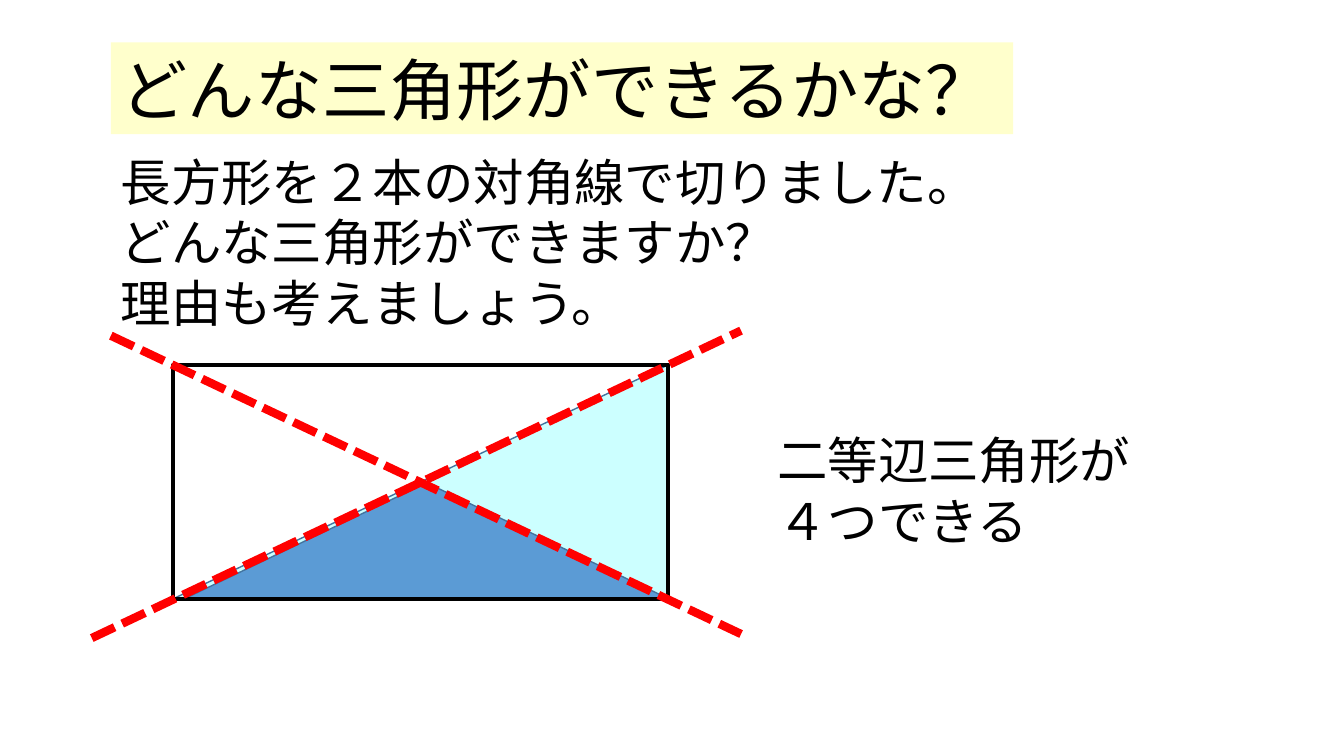
from dataclasses import dataclass

from lxml.etree import SubElement
from pptx import Presentation
from pptx.dml.color import RGBColor
from pptx.enum.dml import MSO_LINE_DASH_STYLE as Dash
from pptx.enum.shapes import MSO_CONNECTOR as Link, MSO_SHAPE as Form
from pptx.enum.text import MSO_ANCHOR as Anchor
from pptx.oxml.ns import qn
from pptx.util import Inches, Pt

FONT = "Noto Sans CJK JP"
BLACK = RGBColor(0x00, 0x00, 0x00)
RED = RGBColor(0xFF, 0x00, 0x00)
BLUE = RGBColor(0x5B, 0x9B, 0xD5)
NAVY = RGBColor(0x43, 0x73, 0x9E)
CYAN = RGBColor(0xCC, 0xFF, 0xFF)
CREAM = RGBColor(0xFF, 0xFF, 0xCC)


@dataclass
class Box:
    """Place and size in percent of the slide's width and height."""
    left: float
    top: float
    width: float
    height: float


@dataclass
class Figure:
    form: Form
    box: Box
    fill: RGBColor | None
    line: RGBColor | None
    weight: float = 1
    flip: bool = False


@dataclass
class Label:
    box: Box
    size: int
    lines: list[str]


@dataclass
class Cut:
    start: tuple[float, float]
    end: tuple[float, float]


# Content
FRAME = Box(12.9, 48.27, 36.83, 30.93)
TITLE = Box(8.25, 5.6, 67.14, 12.13)

FIGURES = [
    Figure(Form.RIGHT_TRIANGLE, FRAME, CYAN, NAVY, flip=True),
    Figure(Form.ISOSCELES_TRIANGLE, Box(13.88, 63.87, 35.71, 15.2), BLUE, NAVY),
    Figure(Form.RECTANGLE, TITLE, CREAM, None),
    Figure(Form.RECTANGLE, FRAME, None, BLACK, 3),
]
CUTS = [
    Cut((6.83, 84.4), (55.14, 43.73)),
    Cut((8.25, 44.4), (55.14, 83.87)),
]
LABELS = [
    Label(TITLE, 48, ["どんな三角形ができるかな？"]),
    Label(Box(57.09, 56.13, 28.06, 17.47), 36, ["二等辺三角形が", "４つできる"]),
    Label(Box(8.25, 19.33, 65.87, 25.6), 36, [
        "長方形を２本の対角線で切りました。",
        "どんな三角形ができますか？",
        "理由も考えましょう。",
    ]),
]

deck = Presentation()
deck.slide_width, deck.slide_height = Inches(13.33), Inches(7.5)
slide = deck.slides.add_slide(deck.slide_layouts[6])


def across(share: float) -> int:
    return round(deck.slide_width * share / 100)


def down(share: float) -> int:
    return round(deck.slide_height * share / 100)


def place(box: Box) -> tuple[int, int, int, int]:
    return across(box.left), down(box.top), across(box.width), down(box.height)


def draw(fig: Figure) -> None:
    shape = slide.shapes.add_shape(fig.form, *place(fig.box))
    shape.shadow.inherit = False
    if fig.fill is None:
        shape.fill.background()
    else:
        shape.fill.solid()
        shape.fill.fore_color.rgb = fig.fill
    if fig.line is None:
        shape.line.fill.background()
    else:
        shape.line.color.rgb = fig.line
        shape.line.width = Pt(fig.weight)
    if fig.flip:
        shape._element.spPr.xfrm.set("flipH", "1")


def slice_by(cut: Cut) -> None:
    (x1, y1), (x2, y2) = cut.start, cut.end
    link = slide.shapes.add_connector(
        Link.STRAIGHT, across(x1), down(y1), across(x2), down(y2))
    link.line.color.rgb = RED
    link.line.width = Pt(6)
    link.line.dash_style = Dash.SQUARE_DOT
    SubElement(link._element.spPr, qn("a:effectLst"))


def write(label: Label) -> None:
    frame = slide.shapes.add_textbox(*place(label.box)).text_frame
    frame.word_wrap = False
    frame.vertical_anchor = Anchor.MIDDLE if label.box is TITLE else Anchor.TOP
    frame.text = "\n".join(label.lines)
    for para in frame.paragraphs:
        font = para.font
        font.name, font.size = FONT, Pt(label.size)
        font.color.rgb = BLACK
        # East Asian glyphs take their own typeface
        SubElement(font._element, qn("a:ea")).set("typeface", FONT)


# Shapes, cutting lines, then text
for figure in FIGURES:
    draw(figure)
for cut in CUTS:
    slice_by(cut)
for label in LABELS:
    write(label)

deck.save("out.pptx")
